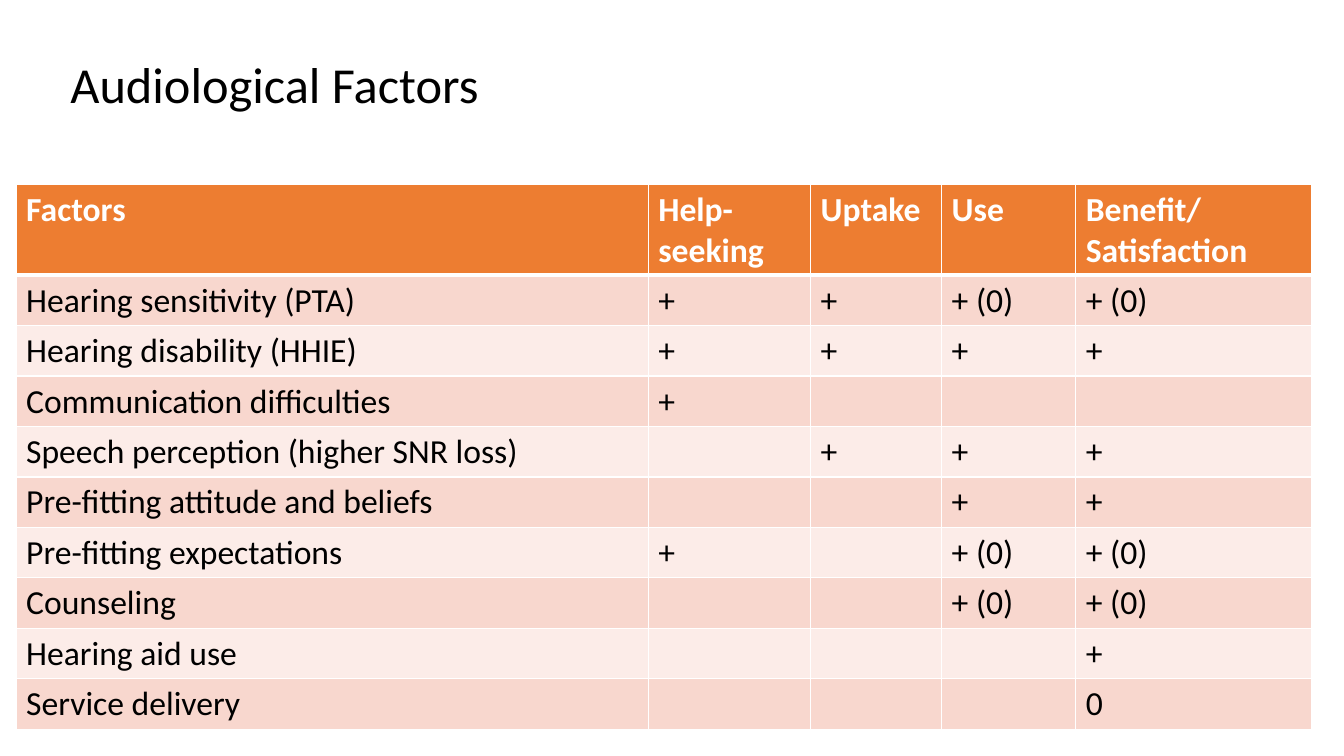
"""Build the Audiological Factors slide with its table of outcomes."""
from lxml.etree import SubElement as Sub
from pptx import Presentation
from pptx.dml.color import RGBColor as RGB
from pptx.enum.text import MSO_ANCHOR as Anchor
from pptx.oxml.ns import qn
from pptx.util import Inches, Pt


def write(frame, text, size=24, color="000000", bold=False, space=1.0):
    for i, line in enumerate(text.split("\n")):
        para = frame.paragraphs[0] if i == 0 else frame.add_paragraph()
        para.line_spacing = space
        run = para.add_run()
        run.text = line
        font = run.font
        font.name, font.size, font.bold = "Calibri", Pt(size), bold
        font.color.rgb = RGB.from_string(color)


def edge(cell, side, width):
    line = Sub(cell._tc.get_or_add_tcPr(), qn("a:ln" + side), w=str(Pt(width)))
    Sub(Sub(line, qn("a:solidFill")), qn("a:srgbClr"), val="FFFFFF")


deck = Presentation()
deck.slide_width, deck.slide_height = Inches(13.33), Inches(7.5)
slide = deck.slides.add_slide(deck.slide_layouts[6])

title = slide.shapes.add_textbox(Inches(0.6), Inches(0.19), Inches(11.4), Inches(1.36))
title.text_frame.word_wrap = True
title.text_frame.vertical_anchor = Anchor.MIDDLE
write(title.text_frame, "Audiological Factors", size=36, space=0.9)

rows = [
    ("Factors", "Help-seeking", "Uptake", "Use", "Benefit/\nSatisfaction"),
    ("Hearing sensitivity (PTA)", "+", "+", "+ (0)", "+ (0)"),
    ("Hearing disability (HHIE)", "+", "+", "+", "+"),
    ("Communication difficulties", "+", "", "", ""),
    ("Speech perception (higher SNR loss)", "", "+", "+", "+"),
    ("Pre-fitting attitude and beliefs", "", "", "+", "+"),
    ("Pre-fitting expectations", "+", "", "+ (0)", "+ (0)"),
    ("Counseling", "", "", "+ (0)", "+ (0)"),
    ("Hearing aid use", "", "", "", "+"),
    ("Service delivery", "", "", "", "0"),
]
widths = [6.27, 1.61, 1.3, 1.33, 2.34]

grid = slide.shapes.add_table(
    len(rows), len(widths), Inches(0.16), Inches(1.83), Inches(sum(widths)), Inches(5.4)
).table
for col, width in zip(grid.columns, widths):
    col.width = Inches(width)

for r, row in enumerate(rows):
    head = r == 0
    grid.rows[r].height = Inches(0.9 if head else 0.5)
    shade = "ED7D31" if head else "F8D7CE" if r % 2 else "FCECE8"
    for c, text in enumerate(row):
        cell = grid.cell(r, c)
        for side in "LRTB":
            thick = (r, side) in [(0, "B"), (1, "T")]
            edge(cell, side, 3 if thick else 1)
        cell.fill.solid()
        cell.fill.fore_color.rgb = RGB.from_string(shade)
        if text:
            write(cell.text_frame, text, color="FFFFFF" if head else "000000", bold=head)

deck.save("out.pptx")
